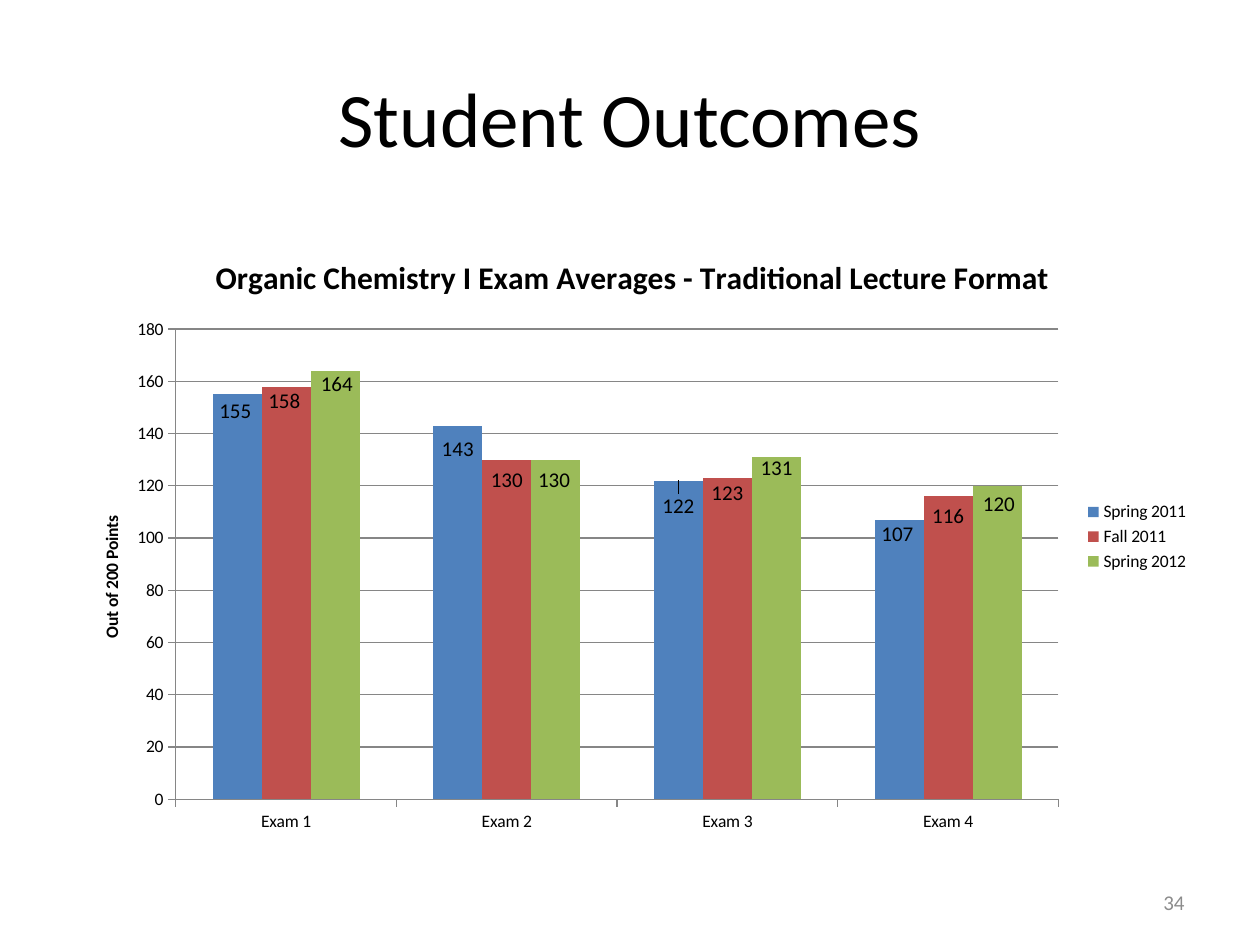
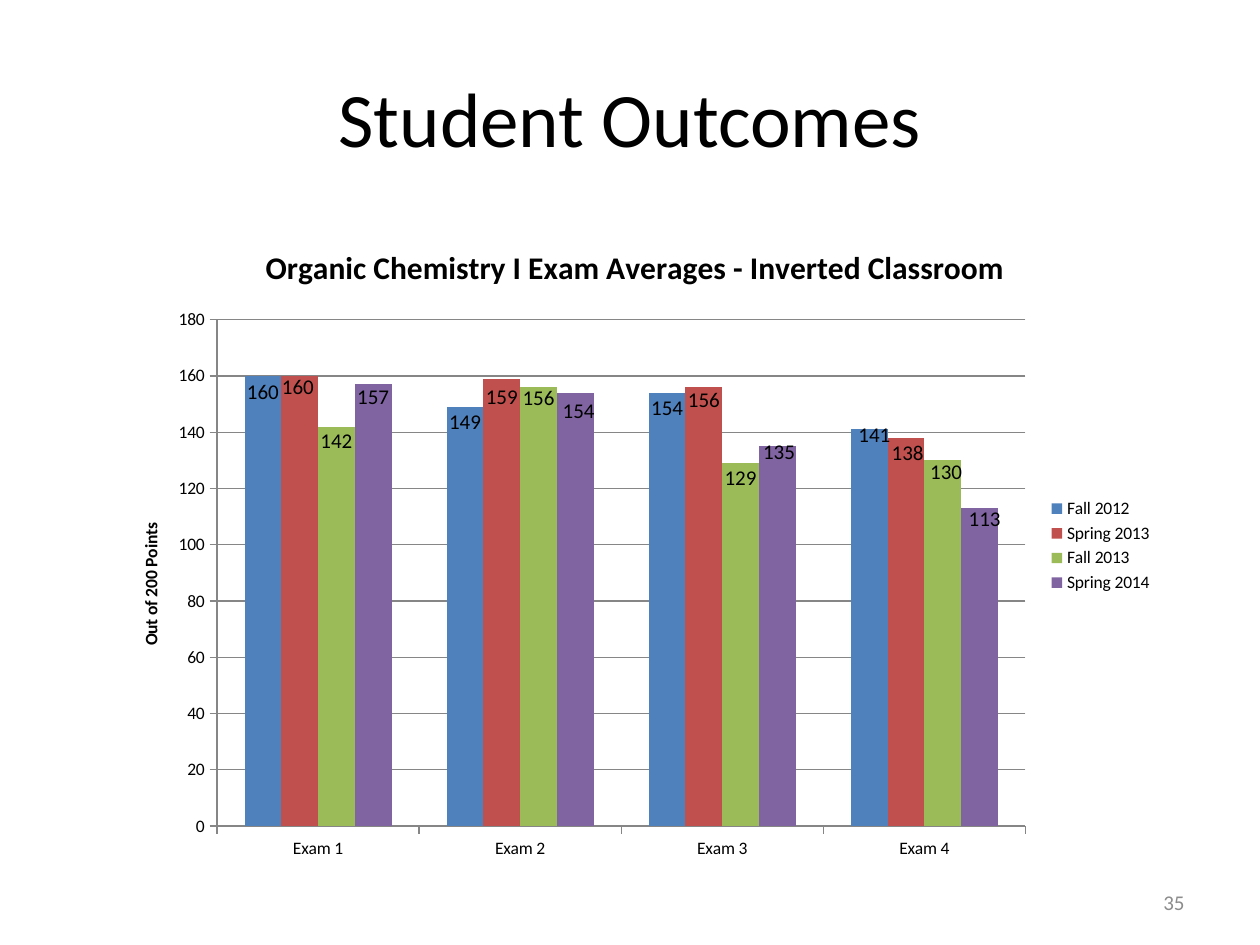
import lxml.etree
import pptx
import pptx.chart.data
import pptx.dml.color
import pptx.enum.chart
import pptx.enum.text
import pptx.oxml.ns
import pptx.util

FONT = "Calibri"
BLACK, GREY, LINE = "000000", "8C8C8C", "868686"
SERIES_COLORS = ["4F81BD", "C0504D", "9BBB59", "8064A2"]
EXAMS = ["Exam 1", "Exam 2", "Exam 3", "Exam 4"]
WIDTH, HEIGHT = 10, 7.5
TITLE_BOX = (0.05, 0.04, 0.9, 1 / 6)
NUMBER_BOX = (0.72, 0.93, 0.23, 0.05)
LABEL_RISE = 7.5

# Each series: name, averages, label drops below the bar top and sideways shifts, in points.
SLIDES = [
    {
        "number": "34",
        "title": "Organic Chemistry I Exam Averages - Traditional Lecture Format",
        "box": (0.05, 0.244, 0.904, 0.648),
        "plot": (9.9, 16.1, 77.5, 76.8),
        "series": [
            ("Spring 2011", (155, 143, 122, 107), (12, 16, 17, 11), (-1, 0, 0, -1)),
            ("Fall 2011", (158, 130, 123, 116), (11, 14, 11, 14), (-1, 0, 0, 0)),
            ("Spring 2012", (164, 130, 131, 120), (10, 14, 9, 13), (1, -1, 0, 1)),
        ],
    },
    {
        "number": "35",
        "title": "Organic Chemistry I Exam Averages - Inverted Classroom",
        "box": (0.083, 0.233, 0.842, 0.689),
        "plot": (10.6, 15.3, 76.2, 77.8),
        "series": [
            ("Fall 2012", (160, 149, 154, 141), (12, 11, 11, 6), (0, 0, 0, 3)),
            ("Spring 2013", (160, 159, 156, 138), (9, 13, 10, 11), (-1, 0, 0, 1)),
            ("Fall 2013", (142, 156, 129, 130), (11, 9, 11, 9), (0, 0, 0, 2)),
            ("Spring 2014", (157, 154, 135, 113), (10, 13, 6, 9), (0, 2, 1, 3)),
        ],
    },
]


def rgb(value):
    """Return the colour for a hex string."""
    return pptx.dml.color.RGBColor.from_string(value)


def place(box):
    """Turn shares of the slide into left, top, width and height."""
    return [pptx.util.Inches(share * side)
            for share, side in zip(box, (WIDTH, HEIGHT, WIDTH, HEIGHT))]


def style_font(font, size, color=BLACK, bold=False):
    """Set the shared typeface with a size, colour and weight."""
    font.name, font.size, font.bold = FONT, pptx.util.Pt(size), bold
    font.color.rgb = rgb(color)


def style_line(line):
    """Draw a thin grey chart line."""
    line.color.rgb = rgb(LINE)
    line.width = pptx.util.Pt(0.75)


def add_text(s, box, text, size, color, align):
    """Add one vertically centred line of text in the box."""
    tf = s.shapes.add_textbox(*place(box)).text_frame
    tf.word_wrap = True
    tf.vertical_anchor = pptx.enum.text.MSO_ANCHOR.MIDDLE
    p = tf.paragraphs[0]
    p.text, p.alignment = text, align
    style_font(p.font, size, color)


def set_layout(parent, index, **values):
    """Give a chart part a manual layout as its child at the index."""
    qn = pptx.oxml.ns.qn
    for old in parent.findall(qn("c:layout")):
        parent.remove(old)
    layout = lxml.etree.Element(qn("c:layout"))
    manual = lxml.etree.SubElement(layout, qn("c:manualLayout"))
    for name, value in values.items():
        lxml.etree.SubElement(manual, qn("c:" + name)).set("val", str(value))
    parent.insert(index, layout)


def add_labels(series, drops, shifts, width, height):
    """Place the value labels relative to the tops of their bars."""
    outside = pptx.enum.chart.XL_LABEL_POSITION.OUTSIDE_END
    labels = series.data_labels
    labels.show_value, labels.position = True, outside
    style_font(labels.font, 12)
    for i in range(len(drops)):
        label = series.points[i].data_label
        label.position = outside
        style_font(label.font, 12)
    parts = series._element.xpath("c:dLbls/c:dLbl")
    for part, drop, shift in zip(parts, drops, shifts):
        set_layout(part, 1, x=shift / width.pt, y=(drop + LABEL_RISE) / height.pt)


def style_axes(chart):
    """Set the scale, lines, ticks and title of both axes."""
    value_axis = chart.value_axis
    value_axis.minimum_scale, value_axis.maximum_scale = 0, 180
    value_axis.major_unit = 20
    value_axis.has_major_gridlines = True
    style_line(value_axis.major_gridlines.format.line)
    for axis in (chart.category_axis, value_axis):
        axis.major_tick_mark = pptx.enum.chart.XL_TICK_MARK.OUTSIDE
        style_line(axis.format.line)
        style_font(axis.tick_labels.font, 10)
    title = value_axis.axis_title
    p = title.text_frame.paragraphs[0]
    p.text = "Out of 200 Points"
    style_font(p.font, 10, bold=True)
    body = title._element.xpath("c:tx/c:rich/a:bodyPr")[0]
    body.set("rot", "-5400000")
    body.set("vert", "horz")
    set_layout(title._element, 1, xMode="edge", yMode="edge", x=0.03, y=0.46)


def add_exam_chart(s, box, title, plot_box, exam_series):
    """Add the clustered columns of exam averages in the box."""
    data = pptx.chart.data.CategoryChartData()
    data.categories = EXAMS
    for name, averages, _, _ in exam_series:
        data.add_series(name, averages)
    frame = s.shapes.add_chart(
        pptx.enum.chart.XL_CHART_TYPE.COLUMN_CLUSTERED, *place(box), data)
    chart = frame.chart
    style_font(chart.font, 10)
    chart.has_title = True
    p = chart.chart_title.text_frame.paragraphs[0]
    p.text = title
    style_font(p.font, 18, bold=True)
    chart.has_legend = True
    chart.legend.position = pptx.enum.chart.XL_LEGEND_POSITION.RIGHT
    chart.legend.include_in_layout = False
    style_font(chart.legend.font, 10)
    style_axes(chart)
    plot = chart.plots[0]
    plot.gap_width, plot.overlap, plot.vary_by_categories = 150, 0, False
    for series, color, (_, _, drops, shifts) in zip(plot.series, SERIES_COLORS, exam_series):
        series.format.fill.solid()
        series.format.fill.fore_color.rgb = rgb(color)
        add_labels(series, drops, shifts, frame.width, frame.height)
    x, y, w, h = (percent / 100 for percent in plot_box)
    set_layout(chart._chartSpace.xpath("c:chart/c:plotArea")[0], 0,
               layoutTarget="inner", xMode="edge", yMode="edge", x=x, y=y, w=w, h=h)


def add_outcome_slide(prs, content):
    """Add a slide with the title, an exam chart and the slide number."""
    s = prs.slides.add_slide(prs.slide_layouts[6])
    align = pptx.enum.text.PP_ALIGN
    add_text(s, TITLE_BOX, "Student Outcomes", 44, BLACK, align.CENTER)
    add_exam_chart(s, content["box"], content["title"], content["plot"], content["series"])
    add_text(s, NUMBER_BOX, content["number"], 12, GREY, align.RIGHT)


def main():
    """Build and save the presentation."""
    prs = pptx.Presentation()
    prs.slide_width = pptx.util.Inches(WIDTH)
    prs.slide_height = pptx.util.Inches(HEIGHT)
    for content in SLIDES:
        add_outcome_slide(prs, content)
    prs.save("out.pptx")


if __name__ == "__main__":
    main()
